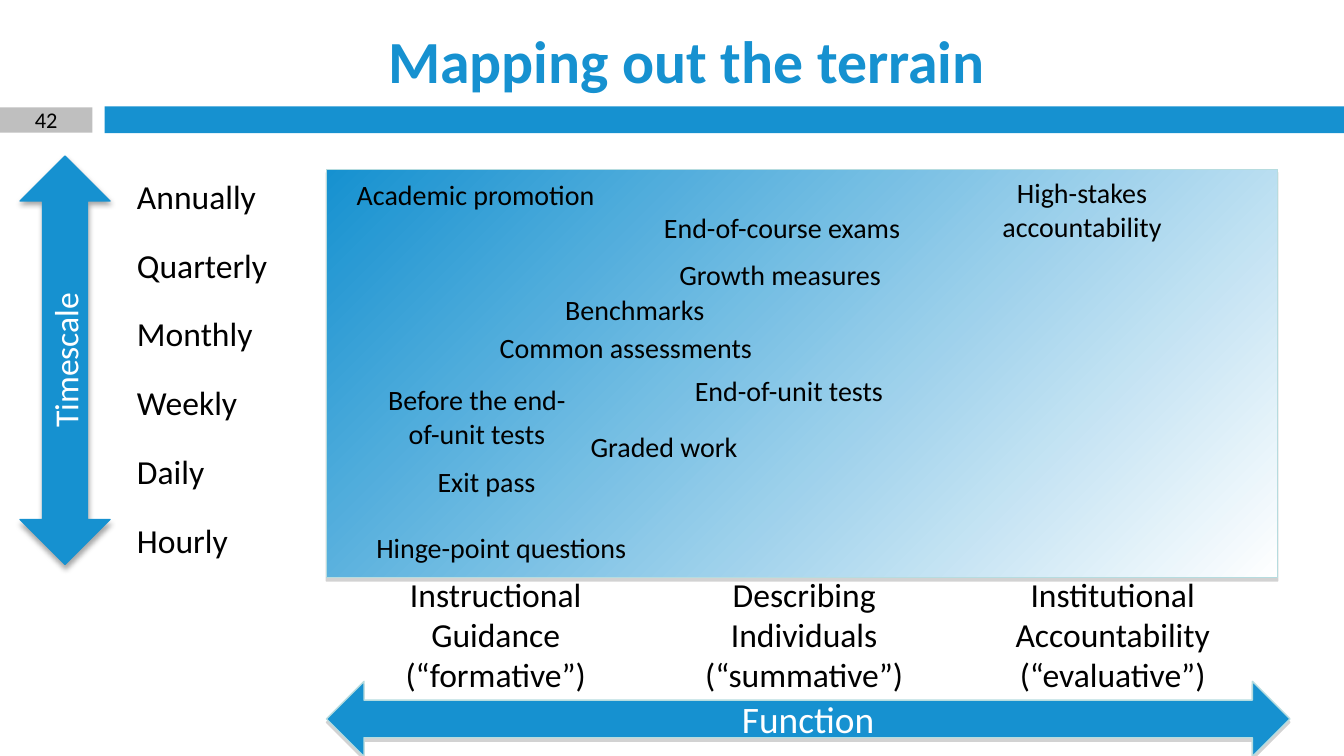
from collections import namedtuple

from lxml.etree import SubElement
from pptx import Presentation
from pptx.dml.color import RGBColor
from pptx.enum.shapes import MSO_SHAPE as Shape
from pptx.enum.text import MSO_ANCHOR as Anchor, PP_ALIGN as Align
from pptx.oxml.ns import qn
from pptx.util import Cm, Pt

COLORS = {
    "blue": "1691D0",
    "gray": "BFBFBF",
    "edge": "B6DCDF",
    "soft": "808080",
    "black": "000000",
    "white": "FFFFFF",
}
FONT = "Calibri"
Box = namedtuple("Box", "left top width height")

PERIODS = ["Annually", "Quarterly", "Monthly", "Weekly", "Daily", "Hourly"]
FUNCTIONS = [
    "Instructional Guidance (“formative”)",
    "Describing Individuals\n(“summative”)",
    "Institutional Accountability (“evaluative”)",
]
ASSESSMENTS = [
    ("High-stakes accountability", 11.56, 0, 5.44),
    ("Academic promotion", 0.23, 0.03, 5.18),
    ("End-of-course exams", 5.89, 0.66, 5.44),
    ("Growth measures", 6.25, 1.55, 4.65),
    ("Benchmarks", 0.43, 2.21, 10.8),
    ("Common assessments", 0.43, 2.92, 10.46),
    ("End-of-unit tests", 6.25, 3.73, 4.98),
    ("Before the end-\vof-unit tests", 0, 3.91, 5.69),
    ("Graded work", 3.89, 4.8, 4.98),
    ("Exit pass", 1.17, 5.46, 3.71),
    ("Hinge-point questions", 0.23, 6.71, 6.15),
]


def rgb(name):
    return RGBColor.from_string(COLORS[name])


def lengths(box):
    return [Cm(value) for value in box]


def write(shape, text, size, color="black", align=Align.CENTER, bold=False):
    frame = shape.text_frame
    frame.text = text
    frame.word_wrap = True
    for para in frame.paragraphs:
        para.alignment = align
        para.font.size = Pt(size)
        for span in para.runs:
            span.font.name = FONT
            span.font.size = Pt(size)
            span.font.bold = bold
            span.font.color.rgb = rgb(color)


def add_label(page, box, text, size, align=Align.CENTER):
    label = page.shapes.add_textbox(*lengths(box))
    write(label, text, size, align=align)
    return label


def add_block(page, kind, box, fill="blue", line=None):
    block = page.shapes.add_shape(kind, *lengths(box))
    block.shadow.inherit = False
    block.fill.solid()
    block.fill.fore_color.rgb = rgb(fill)
    if line:
        block.line.color.rgb = rgb(line)
        block.line.width = Pt(0.75)
    else:
        block.line.fill.background()
    return block


def add_shadow(shape, color, blur):
    effects = shape._element.spPr.find(qn("a:effectLst"))
    shadow = SubElement(effects, qn("a:outerShdw"), blurRad=str(Pt(blur)),
                        dist=str(Pt(1.8)), dir="5400000", rotWithShape="0")
    tint = SubElement(shadow, qn("a:srgbClr"), val=COLORS[color])
    SubElement(tint, qn("a:alpha"), val="35000")


def add_header(page, box):
    band_top, tab_width, gap = box.top + 2.01, 1.75, 0.23
    band_left = box.left + tab_width + gap
    add_block(page, Shape.RECTANGLE, Box(band_left, band_top, box.width - tab_width - gap, 0.51))
    tab = Box(box.left, band_top + 0.02, tab_width, 0.48)
    add_block(page, Shape.RECTANGLE, tab, "gray")
    number = add_label(page, tab, "42", 12)
    number.text_frame.vertical_anchor = Anchor.MIDDLE

    title = page.shapes.title
    title.left, title.top, title.width, title.height = lengths(
        Box(band_left, box.top + 0.48, 22, 1.3))
    write(title, "Mapping out the terrain", 32, "blue", bold=True)
    title.text_frame.vertical_anchor = Anchor.MIDDLE


def add_timescale(page, box):
    arrow = add_block(page, Shape.UP_DOWN_ARROW, Box(box.left, box.top, 1.7, box.height), line="blue")
    add_shadow(arrow, "black", 3.1)
    write(arrow, "Timescale", 18, "white")
    arrow.text_frame.vertical_anchor = Anchor.MIDDLE
    arrow.text_frame._txBody.bodyPr.set("vert", "vert270")

    for row, period in enumerate(PERIODS):
        place = Box(box.left + 1.96, box.top + 0.25 + row * 1.3, 3.38, 1.02)
        add_label(page, place, period, 18, Align.LEFT)


def add_terrain(page, box):
    terrain = add_block(page, Shape.RECTANGLE, box, line="edge")
    terrain.fill.gradient()
    terrain.fill.gradient_angle = 315
    for stop, position, color in zip(terrain.fill.gradient_stops, (0, 1), ("blue", "white")):
        stop.position = position
        stop.color.rgb = rgb(color)
    add_shadow(terrain, "soft", 0)

    for text, left, top, width in ASSESSMENTS:
        add_label(page, Box(box.left + left, box.top + top, width, 0.89), text, 15)


def add_functions(page, box):
    for column, text in enumerate(FUNCTIONS):
        place = Box(box.left + 0.66 + column * 5.83, box.top, 5.08, 2.57)
        add_label(page, place, text, 18)

    arrow_height = 1.42
    arrow = add_block(
        page, Shape.LEFT_RIGHT_ARROW,
        Box(box.left, box.top + box.height - arrow_height, box.width, arrow_height), line="edge")
    add_shadow(arrow, "soft", 0)
    write(arrow, "Function", 20, "white")
    arrow.text_frame.vertical_anchor = Anchor.MIDDLE


def main():
    deck = Presentation()
    deck.slide_width, deck.slide_height = Cm(25.4), Cm(14.29)
    page = deck.slides.add_slide(deck.slide_layouts[5])
    add_header(page, Box(0, 0, 25.4, 2.52))
    add_terrain(page, Box(6.17, 3.2, 17.98, 7.72))
    add_timescale(page, Box(0.38, 2.95, 5.34, 7.72))
    add_functions(page, Box(6.17, 10.72, 18.21, 3.58))
    deck.save("out.pptx")


if __name__ == "__main__":
    main()
